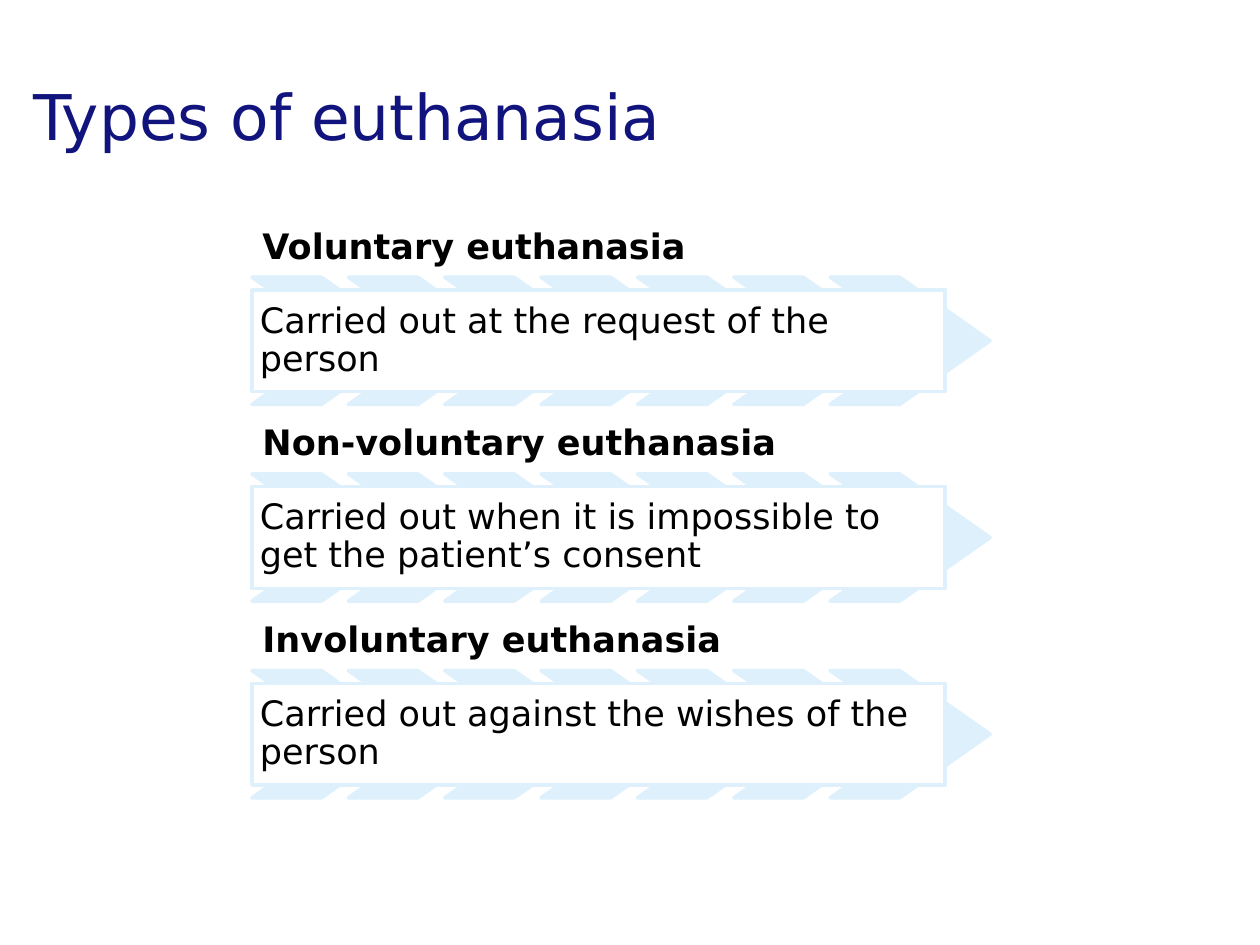
from pptx import Presentation
from pptx.dml.color import RGBColor
from pptx.enum.shapes import MSO_SHAPE
from pptx.enum.text import MSO_ANCHOR, PP_ALIGN
from pptx.util import Pt

NAVY, BLACK, WHITE, PALE_BLUE = "11147D", "000000", "FFFFFF", "DEF0FC"

TYPES = [
    ("Voluntary euthanasia", "Carried out at the request of the person"),
    ("Non-voluntary euthanasia",
     "Carried out when it is impossible to get the patient’s consent"),
    ("Involuntary euthanasia", "Carried out against the wishes of the person"),
]

LEFT, FIRST_TOP, ROW_STEP = 144, 123.1, 112.4
HEADING_HEIGHT = 35.3
CHEVRON_COUNT, CHEVRON_STEP = 7, 55.07
CHEVRON_WIDTH, CHEVRON_HEIGHT = 91.4, 72.7
PANEL_WIDTH, PANEL_HEIGHT = 396, 58.2


def color(hex_string):
    return RGBColor.from_string(hex_string)


class SlideBuilder:
    font_name = "DejaVu Sans"
    line_width = 2

    def __init__(self, slide):
        self.slide = slide

    def set_text(self, box, text, size, ink, bold=False, anchor=MSO_ANCHOR.MIDDLE,
                 margin=4.5, spacing=0.9):
        frame = box.text_frame
        frame.word_wrap = True
        frame.vertical_anchor = anchor
        frame.margin_left = frame.margin_right = Pt(margin)
        frame.margin_top = frame.margin_bottom = Pt(margin)
        frame.text = text
        para = frame.paragraphs[0]
        para.alignment = PP_ALIGN.LEFT
        para.line_spacing = spacing
        font = para.runs[0].font
        font.name, font.size, font.bold = self.font_name, Pt(size), bold
        font.color.rgb = color(ink)

    def text(self, left, top, width, height, text, size, ink, **style):
        box = self.slide.shapes.add_textbox(Pt(left), Pt(top), Pt(width), Pt(height))
        self.set_text(box, text, size, ink, **style)

    def shape(self, kind, left, top, width, height, fill):
        shape = self.slide.shapes.add_shape(
            kind, Pt(left), Pt(top), Pt(width), Pt(height))
        shape.shadow.inherit = False
        shape.fill.solid()
        shape.fill.fore_color.rgb = color(fill)
        shape.line.color.rgb = color(PALE_BLUE)
        shape.line.width = Pt(self.line_width)
        return shape

    def chevron(self, left, top):
        chevron = self.shape(MSO_SHAPE.CHEVRON, left, top,
                             CHEVRON_WIDTH, CHEVRON_HEIGHT, PALE_BLUE)
        chevron.adjustments[0] = 0.71

    def panel(self, left, top, text):
        panel = self.shape(MSO_SHAPE.RECTANGLE, left, top,
                           PANEL_WIDTH, PANEL_HEIGHT, WHITE)
        self.set_text(panel, text, 20, BLACK)


def main():
    deck = Presentation()
    deck.slide_width, deck.slide_height = Pt(720), Pt(540)
    builder = SlideBuilder(deck.slides.add_slide(deck.slide_layouts[6]))

    # Title
    builder.text(12, 24, 678, 84, "Types of euthanasia", 36, NAVY,
                 margin=7.2, spacing=1)

    # One heading, chevron band and description per type
    for row, (heading, description) in enumerate(TYPES):
        top = FIRST_TOP + row * ROW_STEP
        builder.text(LEFT, top, 391, HEADING_HEIGHT, heading, 20, BLACK,
                     bold=True, anchor=MSO_ANCHOR.BOTTOM, margin=6)
        band_top = top + HEADING_HEIGHT
        for column in range(CHEVRON_COUNT):
            builder.chevron(LEFT + column * CHEVRON_STEP, band_top)
        panel_top = band_top + (CHEVRON_HEIGHT - PANEL_HEIGHT) / 2
        builder.panel(LEFT, panel_top, description)

    deck.save("out.pptx")


if __name__ == "__main__":
    main()
